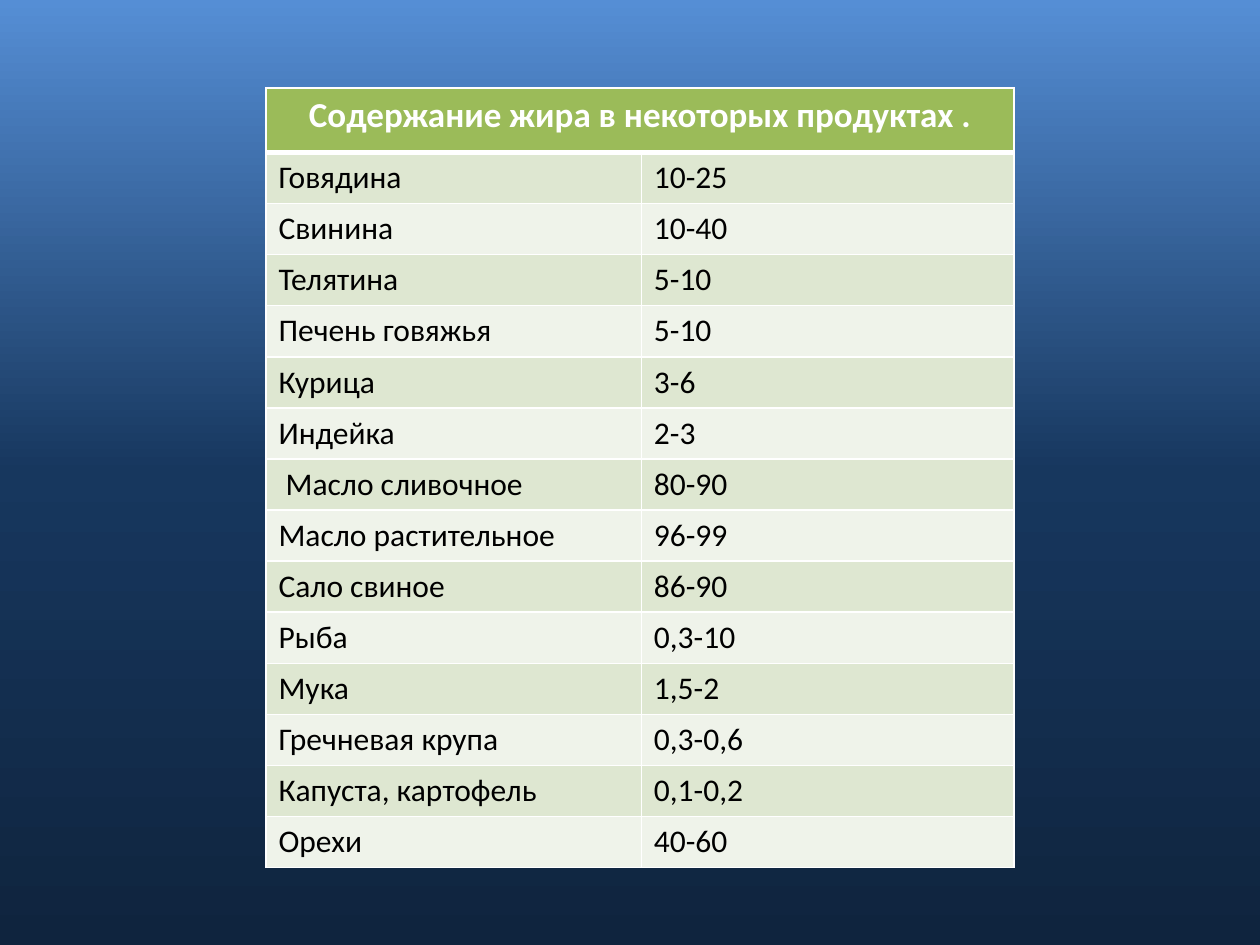
from copy import deepcopy
from dataclasses import dataclass

from lxml import etree
from pptx import Presentation
from pptx.dml.color import RGBColor
from pptx.enum.text import PP_ALIGN
from pptx.oxml.ns import qn
from pptx.util import Pt

CENTER = PP_ALIGN.CENTER
LEFT = PP_ALIGN.LEFT


@dataclass(frozen=True)
class Theme:
    font: str = "Calibri"
    head_size: int = 20
    body_size: int = 18
    white: str = "FFFFFF"
    black: str = "000000"
    green: str = "9BBB59"
    bands: tuple = ("DEE7D1", "EFF3EA")
    sky: tuple = ((0, "558ED5"), (0.5, "17375E"), (1, "0F243E"))


THEME = Theme()
TITLE = "Содержание жира в некоторых продуктах ."
FOODS = [
    ("Говядина", "10-25"),
    ("Свинина", "10-40"),
    ("Телятина", "5-10"),
    ("Печень говяжья", "5-10"),
    ("Курица", "3-6"),
    ("Индейка", "2-3"),
    (" Масло сливочное", "80-90"),
    ("Масло растительное", "96-99"),
    ("Сало свиное", "86-90"),
    ("Рыба", "0,3-10"),
    ("Мука", "1,5-2"),
    ("Гречневая крупа", "0,3-0,6"),
    ("Капуста, картофель", "0,1-0,2"),
    ("Орехи", "40-60"),
]


def paint_back(slide):
    fill = slide.background.fill
    fill.gradient()
    fill.gradient_angle = 270
    stops = slide.element.xpath(".//a:gsLst")[0]
    stops.append(deepcopy(stops[-1]))
    for stop, (place, color) in zip(fill.gradient_stops, THEME.sky):
        stop.position = place
        stop.color.rgb = RGBColor.from_string(color)


def add_edges(cell, top, base):
    props = cell._tc.get_or_add_tcPr()
    for side, width in (("L", 1), ("R", 1), ("T", top), ("B", base)):
        line = etree.SubElement(props, qn(f"a:ln{side}"), w=str(Pt(width)))
        solid = etree.SubElement(line, qn("a:solidFill"))
        etree.SubElement(solid, qn("a:srgbClr"), val=THEME.white)


def style_cell(cell, fill, top=1, base=1):
    add_edges(cell, top, base)
    cell.fill.solid()
    cell.fill.fore_color.rgb = RGBColor.from_string(fill)


def write_cell(cell, text, size, color, bold=False, align=LEFT):
    cell.text_frame.text = text
    para = cell.text_frame.paragraphs[0]
    para.alignment = align
    font = para.runs[0].font
    font.name = THEME.font
    font.size = Pt(size)
    font.bold = bold
    font.color.rgb = RGBColor.from_string(color)


def add_foods(slide):
    head, step, widths = 36.7, 29.2, (214.5, 213)
    frame = slide.shapes.add_table(
        len(FOODS) + 1, len(widths), Pt(152), Pt(50.4),
        Pt(sum(widths)), Pt(head + step * len(FOODS)))
    table = frame.table
    for col, width in zip(table.columns, widths):
        col.width = Pt(width)
    for row in table.rows:
        row.height = Pt(step)
    table.rows[0].height = Pt(head)

    first = table.cell(0, 0)
    first.merge(table.cell(0, 1))
    for cell in table.rows[0].cells:
        style_cell(cell, THEME.green, base=3)
    write_cell(first, TITLE, THEME.head_size, THEME.white, True, CENTER)

    for i, food in enumerate(FOODS):
        for j, text in enumerate(food):
            cell = table.cell(i + 1, j)
            style_cell(cell, THEME.bands[i % 2], top=1 if i else 3)
            write_cell(cell, text, THEME.body_size, THEME.black)


def main():
    deck = Presentation()
    deck.slide_width, deck.slide_height = Pt(720), Pt(540)
    slide = deck.slides.add_slide(deck.slide_layouts[6])
    paint_back(slide)
    add_foods(slide)
    deck.save("out.pptx")


if __name__ == "__main__":
    main()
